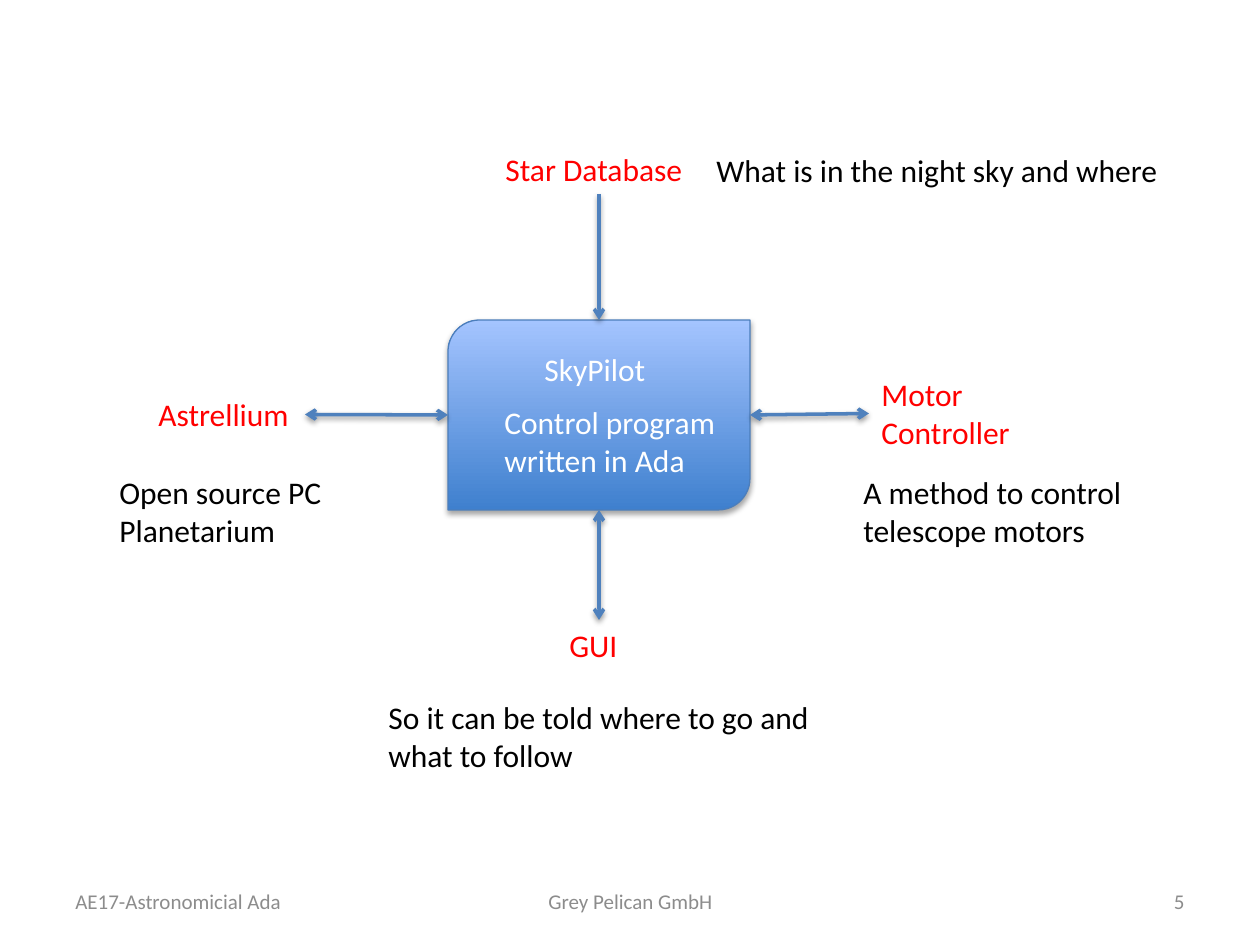
from dataclasses import dataclass

from lxml.etree import SubElement
from pptx import Presentation
from pptx.dml.color import RGBColor
from pptx.enum.shapes import MSO_CONNECTOR as Connector, MSO_SHAPE as Shape
from pptx.enum.text import MSO_ANCHOR as Anchor, MSO_AUTO_SIZE as AutoSize, PP_ALIGN as Align
from pptx.oxml.ns import qn
from pptx.util import Emu, Pt

SCALE = 914400 / 126
FONT = "Calibri"
RED, BLACK, WHITE, GREY, BLUE = "FF0000", "000000", "FFFFFF", "8C8C8C", "4F81BD"
TOP, LEFT, BOTTOM, RIGHT = range(4)
HUB_LEFT, HUB_TOP, HUB_WIDTH, HUB_HEIGHT = 448, 320, 302, 190
HUB_RIGHT, HUB_BOTTOM = HUB_LEFT + HUB_WIDTH, HUB_TOP + HUB_HEIGHT
HUB_X, HUB_Y = HUB_LEFT + HUB_WIDTH // 2, HUB_TOP + HUB_HEIGHT // 2


@dataclass
class Caption:
    lines: tuple[str, ...]
    left: int
    top: int
    width: int
    height: int
    color: str = BLACK
    size: int = 18
    align: Align = Align.LEFT
    anchor: Anchor = Anchor.TOP


@dataclass
class Neighbour:
    label: Caption
    side: int
    hub_point: tuple[int, int]
    two_way: bool = True


NEIGHBOURS = [
    Neighbour(Caption(("Star Database",), 493, 144, 212, 50, RED), BOTTOM, (HUB_X, HUB_TOP), False),
    Neighbour(Caption(("Astrellium",), 146, 389, 159, 51, RED), RIGHT, (HUB_LEFT, HUB_Y)),
    Neighbour(Caption(("Motor Controller",), 869, 369, 188, 89, RED), LEFT, (HUB_RIGHT, HUB_Y)),
    Neighbour(Caption(("GUI",), 557, 620, 84, 50, RED), TOP, (HUB_X, HUB_BOTTOM)),
]

CAPTIONS = [
    Caption(("So it can be told where to go and what to follow",), 376, 692, 454, 89),
    Caption(("What is in the night sky and where",), 704, 145, 476, 50),
    Caption(("A method to control telescope motors",), 851, 467, 294, 89),
    Caption(("Open source PC", "Planetarium"), 107, 467, 249, 89),
    Caption(("Control program written in Ada",), 492, 397, 252, 89, WHITE),
    Caption(("SkyPilot",), 532, 344, 158, 50, WHITE),
]

FOOTERS = [
    Caption(("AE17-Astronomicial Ada",), 63, 876, 294, 50, GREY, 12, Align.LEFT, Anchor.MIDDLE),
    Caption(("Grey Pelican GmbH",), 431, 876, 399, 50, GREY, 12, Align.CENTER, Anchor.MIDDLE),
    Caption(("5",), 903, 876, 294, 50, GREY, 12, Align.RIGHT, Anchor.MIDDLE),
]


def px(length: int) -> Emu:
    return Emu(round(length * SCALE))


def rgb(color: str) -> RGBColor:
    return RGBColor.from_string(color)


def add_shadow(effects, distance: int, opacity: int) -> None:
    shadow = SubElement(effects, qn("a:outerShdw"), blurRad="40000", dist=str(distance),
                        dir="5400000", rotWithShape="0")
    shade = SubElement(shadow, qn("a:srgbClr"), val=BLACK)
    SubElement(shade, qn("a:alpha"), val=str(opacity * 1000))


def draw_hub(page) -> None:
    hub = page.shapes.add_shape(Shape.ROUND_2_DIAG_RECTANGLE, px(HUB_LEFT), px(HUB_TOP),
                                px(HUB_WIDTH), px(HUB_HEIGHT))
    hub.fill.gradient()
    hub.fill.gradient_angle = 90
    for stop, position, color in zip(hub.fill.gradient_stops, (0, 1), ("3F80CE", "A4C4FF")):
        stop.position = position
        stop.color.rgb = rgb(color)
    hub.line.color.rgb = rgb("4B7EBC")
    hub.line.width = Pt(0.75)
    hub.shadow.inherit = False
    add_shadow(hub.element.spPr.find(qn("a:effectLst")), 23000, 35)


def draw_caption(page, caption: Caption):
    box = page.shapes.add_textbox(px(caption.left), px(caption.top),
                                  px(caption.width), px(caption.height))
    frame = box.text_frame
    frame.word_wrap = True
    frame.auto_size = AutoSize.NONE
    frame.vertical_anchor = caption.anchor
    for index, line in enumerate(caption.lines):
        para = frame.add_paragraph() if index else frame.paragraphs[0]
        para.alignment = caption.align
        span = para.add_run()
        span.text = line
        span.font.name = FONT
        span.font.size = Pt(caption.size)
        span.font.color.rgb = rgb(caption.color)
    return box


def draw_neighbour(page, neighbour: Neighbour) -> None:
    box = draw_caption(page, neighbour.label)
    end_x, end_y = map(px, neighbour.hub_point)
    arrow = page.shapes.add_connector(Connector.STRAIGHT, box.left, box.top, end_x, end_y)
    arrow.begin_connect(box, neighbour.side)
    arrow.line.color.rgb = rgb(BLUE)
    arrow.line.width = Pt(2)
    properties = arrow._element.spPr
    outline = properties.find(qn("a:ln"))
    if neighbour.two_way:
        SubElement(outline, qn("a:headEnd"), type="arrow")
    SubElement(outline, qn("a:tailEnd"), type="arrow")
    add_shadow(SubElement(properties, qn("a:effectLst")), 20000, 38)


def main() -> None:
    deck = Presentation()
    deck.slide_width, deck.slide_height = px(1260), px(945)
    page = deck.slides.add_slide(deck.slide_layouts[6])
    draw_hub(page)
    for neighbour in NEIGHBOURS:
        draw_neighbour(page, neighbour)
    for caption in FOOTERS + CAPTIONS:
        draw_caption(page, caption)
    deck.save("out.pptx")


if __name__ == "__main__":
    main()
